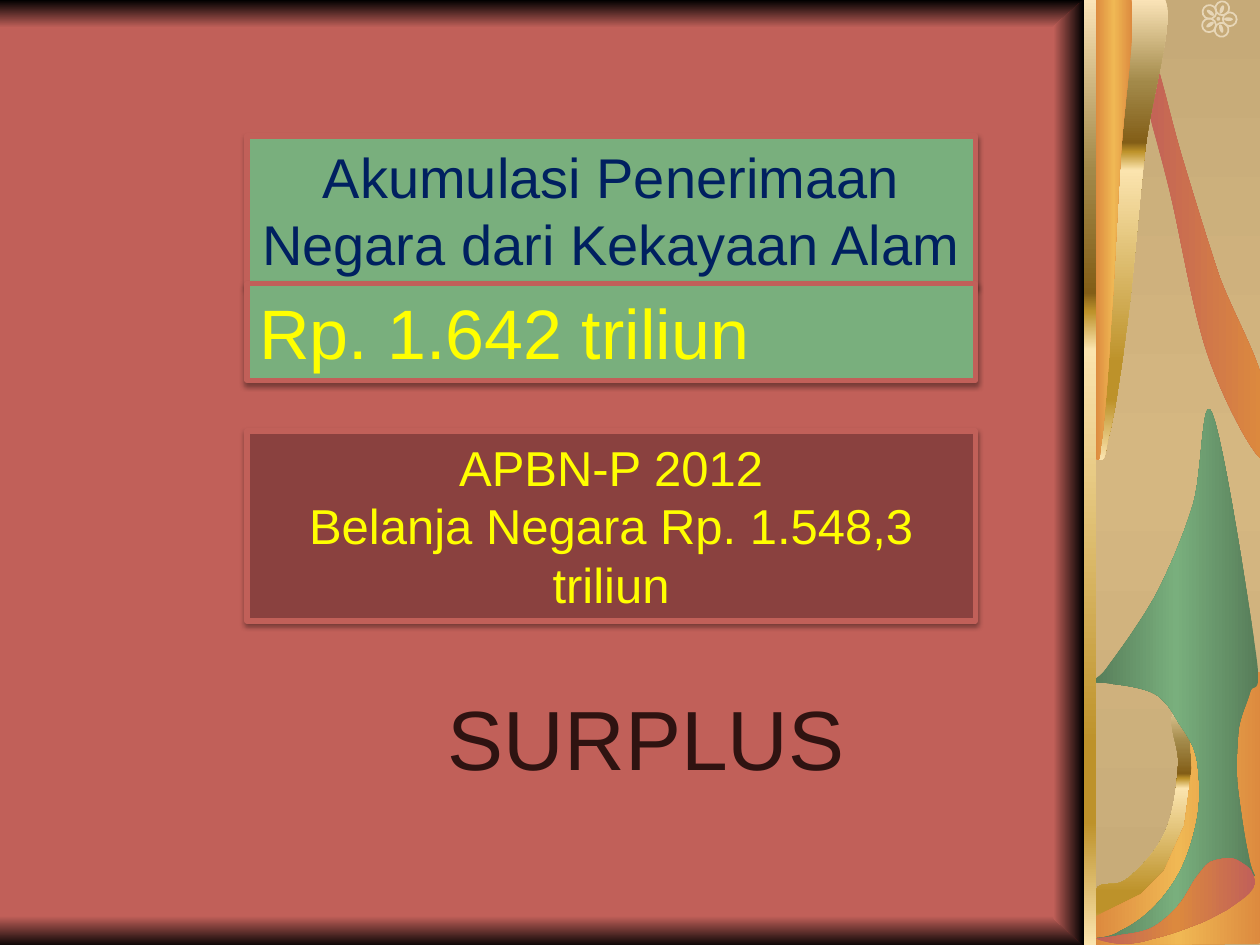
from math import cos, radians, sin

from pptx import Presentation
from pptx.dml.color import RGBColor
from pptx.enum.shapes import MSO_SHAPE
from pptx.enum.text import MSO_ANCHOR, MSO_AUTO_SIZE, PP_ALIGN
from pptx.oxml import parse_xml
from pptx.oxml.ns import nsdecls
from pptx.util import Cm, Pt

RECT, OVAL = MSO_SHAPE.RECTANGLE, MSO_SHAPE.OVAL
LEFT, CENTER = PP_ALIGN.LEFT, PP_ALIGN.CENTER
TOP = MSO_ANCHOR.TOP
GROW = MSO_AUTO_SIZE.SHAPE_TO_FIT_TEXT

COLORS = {
    "red": "C16059", "black": "000000", "sand": "C6AA78", "light_sand": "D5B781",
    "flower": "E7D6B7", "orange": "DC893E", "amber": "F0B854",
    "green": "79AF7D", "dark_green": "577D59", "maroon": "8A413F",
    "navy": "002060", "yellow": "FFFF00", "brown": "2F1311",
    "cream": "FAE3B7", "bronze": "A28949", "dark_bronze": "835E17",
    "gold": "BD922A", "pale_gold": "FBE4AE",
}
FADE = [(0, "red"), (100, "black")]
FADE_IN = [(0, "black"), (100, "red")]
SAND = [(0, "sand"), (50, "light_sand"), (100, "sand")]
GOLD = [(0, "cream"), (18, "bronze"), (31, "dark_bronze"), (33, "gold"),
        (37, "pale_gold"), (79, "gold"), (87, "gold"), (100, "pale_gold")]
ORANGE = [(0, "orange"), (50, "amber"), (100, "orange")]
GREEN = [(0, "dark_green"), (50, "green"), (100, "dark_green")]
EMBER = [(0, "red"), (100, "orange")]
FLAME = [(0, "red"), (50, "orange"), (100, "red")]

# Each outline is a start point, then lines (2 numbers) and Bezier curves (6 numbers).
GOLD_HOOK = [
    (9.34, 5.64), (9.23, 5.7, 9.37, 5.92, 9.35, 6.08),
    (9.34, 6.25, 9.31, 6.48, 9.24, 6.62), (9.17, 6.77, 9.03, 6.91, 8.94, 6.98),
    (8.85, 7.05, 8.74, 6.98, 8.7, 7.06), (8.7, 7.49), (10, 7.49), (10, 5.68),
    (9.89, 5.37, 9.48, 5.64, 9.34, 5.64)]
ORANGE_BASE = [
    (8.68, 7.5), (8.68, 7.28), (9.05, 7.1), (9.24, 6.91), (9.4, 6.55), (9.46, 6.1),
    (9.44, 5.76), (9.87, 5.31), (10.02, 5.34), (10.02, 7.49)]
GREEN_LEAF = [
    (9.62, 3.28), (9.54, 3.08, 9.54, 3.77, 9.47, 4), (9.4, 4.23, 9.3, 4.47, 9.19, 4.69),
    (9.08, 4.9, 8.89, 5.16, 8.8, 5.28), (8.72, 5.4, 8.67, 5.38, 8.68, 5.41),
    (8.68, 5.43, 8.76, 5.41, 8.84, 5.43), (8.93, 5.44, 9.08, 5.46, 9.17, 5.51),
    (9.25, 5.56, 9.3, 5.64, 9.35, 5.73), (9.41, 5.82, 9.48, 5.91, 9.5, 6.04),
    (9.52, 6.17, 9.53, 6.34, 9.5, 6.5), (9.47, 6.66, 9.41, 6.86, 9.31, 7.01),
    (9.21, 7.16, 9.08, 7.3, 8.89, 7.39), (8.78, 7.46, 8.69, 7.43, 8.71, 7.45),
    (8.73, 7.46, 8.9, 7.5, 9.01, 7.48), (9.12, 7.46, 9.26, 7.41, 9.34, 7.34),
    (9.43, 7.28, 9.48, 7.15, 9.54, 7.07), (9.6, 7, 9.65, 6.93, 9.71, 6.9),
    (9.76, 6.87, 9.83, 6.89, 9.88, 6.9), (9.92, 6.91, 9.95, 6.97, 9.96, 6.95),
    (9.96, 6.94, 9.93, 6.91, 9.91, 6.79), (9.88, 6.67, 9.84, 6.39, 9.82, 6.22),
    (9.81, 6.05, 9.82, 5.91, 9.83, 5.79), (9.85, 5.67, 9.89, 5.6, 9.92, 5.5),
    (9.94, 5.4, 10.02, 5.56, 9.97, 5.2), (9.92, 4.84, 9.71, 3.48, 9.62, 3.28)]
RED_RIBBON = [
    (9.14, 0.4), (9.2, 0.51, 9.29, 0.94, 9.38, 1.24), (9.47, 1.54, 9.58, 1.9, 9.68, 2.2),
    (9.79, 2.49, 9.96, 2.78, 10.02, 3.02), (10.02, 3.65),
    (9.94, 3.61, 9.7, 3.16, 9.58, 2.8), (9.46, 2.44, 9.37, 1.87, 9.28, 1.5),
    (9.19, 1.13, 9.07, 0.76, 9.05, 0.58), (9.02, 0.4, 9.09, 0.29, 9.14, 0.4)]
GOLD_RIBBON = [
    (8.69, 3.64), (8.78, 3.67, 8.76, 3.64, 8.8, 3.46), (8.85, 3.28, 8.9, 2.92, 8.95, 2.54),
    (9, 2.16, 9.04, 1.6, 9.09, 1.18), (9.14, 0.75, 9.32, 0.2, 9.25, 0), (8.69, 0)]
ORANGE_RIBBON = [
    (8.69, 3.64), (8.74, 3.67, 8.72, 3.64, 8.75, 3.46), (8.77, 3.28, 8.8, 2.92, 8.82, 2.54),
    (8.85, 2.16, 8.87, 1.6, 8.9, 1.18), (8.93, 0.76, 9.02, 0.2, 8.98, 0), (8.69, 0)]
FLAME_TIP = [
    (8.7, 7.45), (8.7, 7.44, 8.83, 7.44, 8.9, 7.42), (8.98, 7.41, 9.07, 7.4, 9.15, 7.36),
    (9.22, 7.32, 9.3, 7.25, 9.35, 7.19), (9.41, 7.12, 9.45, 7.03, 9.49, 6.97),
    (9.54, 6.91, 9.56, 6.87, 9.61, 6.84), (9.66, 6.82, 9.72, 6.81, 9.77, 6.81),
    (9.81, 6.82, 9.83, 6.83, 9.86, 6.85), (9.89, 6.87, 9.93, 6.89, 9.94, 6.93),
    (9.96, 6.96, 9.98, 7.01, 9.94, 7.06), (9.91, 7.11, 9.81, 7.17, 9.74, 7.22),
    (9.66, 7.26, 9.58, 7.31, 9.49, 7.34), (9.39, 7.38, 9.25, 7.43, 9.15, 7.45),
    (9.06, 7.48, 8.99, 7.49, 8.91, 7.49), (8.83, 7.49, 8.71, 7.46, 8.7, 7.45)]
SIDE_EDGE = [(8.6, 0), (8.36, 0.21), (8.36, 7.29), (8.6, 7.5)]


def rgb(name):
    return RGBColor.from_string(COLORS[name])


def inch(value):
    return Cm(value * 2.54)


def paint_gradient(sp, stops, angle):
    sp.shadow.inherit = False
    sp.line.fill.background()
    gs = "".join(f'<a:gs pos="{pos * 1000}"><a:srgbClr val="{COLORS[c]}"/></a:gs>'
                 for pos, c in stops)
    sp._element.spPr.insert(2, parse_xml(
        f'<a:gradFill {nsdecls("a")} rotWithShape="1"><a:gsLst>{gs}</a:gsLst>'
        f'<a:lin ang="{angle * 60000}" scaled="0"/></a:gradFill>'))


def add_preset(s, kind, box):
    sp = s.shapes.add_shape(kind, *map(inch, box))
    sp.shadow.inherit = False
    return sp


def add_band(s, box, stops):
    paint_gradient(add_preset(s, RECT, box), stops, 90)


def flatten(outline, steps=12):
    points = [outline[0]]
    for seg in outline[1:]:
        if len(seg) == 2:
            points.append(seg)
            continue
        ctrl = [points[-1], seg[:2], seg[2:4], seg[4:]]
        for i in range(1, steps + 1):
            t = i / steps
            weights = ((1 - t) ** 3, 3 * t * (1 - t) ** 2, 3 * t * t * (1 - t), t ** 3)
            points.append(tuple(sum(w * c[k] for w, c in zip(weights, ctrl))
                                for k in (0, 1)))
    return [(inch(x), inch(y)) for x, y in points]


def add_outline(s, outline, stops, angle):
    start, *rest = flatten(outline)
    builder = s.shapes.build_freeform(*start)
    builder.add_line_segments(rest, close=True)
    paint_gradient(builder.convert_to_shape(), stops, angle)


def add_oval(s, cx, cy, w, h, angle=0, ring=False):
    sp = add_preset(s, OVAL, (cx - w / 2, cy - h / 2, w, h))
    sp.rotation = angle
    if ring:
        sp.fill.background()
        sp.line.color.rgb = rgb("flower")
        sp.line.width = Pt(1)
    else:
        sp.fill.solid()
        sp.fill.fore_color.rgb = rgb("flower")
        sp.line.fill.background()


def add_flower(s, cx, cy):
    add_oval(s, cx, cy, 0.03, 0.03)
    for angle in range(2, 362, 72):
        dx, dy = cos(radians(angle)), sin(radians(angle))
        add_oval(s, cx + 0.09 * dx, cy + 0.09 * dy, 0.11, 0.11, angle, ring=True)
        add_oval(s, cx + 0.08 * dx, cy + 0.08 * dy, 0.07, 0.03, angle)


def add_text(sp, lines, size, color, align):
    tf = sp.text_frame
    tf.word_wrap = True
    tf.auto_size = GROW
    tf.vertical_anchor = TOP
    for i, line in enumerate(lines):
        p = tf.paragraphs[0] if i == 0 else tf.add_paragraph()
        p.alignment = align
        r = p.add_run()
        r.text = line
        r.font.name = "Arial"
        r.font.size = Pt(size)
        r.font.color.rgb = rgb(color)


def add_panel(s, top, height, fill, lines, size, color, align=CENTER):
    sp = add_preset(s, RECT, (1.96, top, 5.78, height))
    sp.fill.solid()
    sp.fill.fore_color.rgb = rgb(fill)
    sp.line.color.rgb = rgb("red")
    sp.line.width = Pt(3)
    effects = sp._element.spPr.find("{*}effectLst")
    effects.append(parse_xml(
        f'<a:outerShdw {nsdecls("a")} blurRad="{Pt(3.1)}" dist="{Pt(1.6)}" dir="5400000" '
        f'rotWithShape="0"><a:srgbClr val="{COLORS["black"]}"><a:alpha val="38000"/>'
        '</a:srgbClr></a:outerShdw>'))
    add_text(sp, lines, size, color, align)


def main():
    prs = Presentation()
    prs.slide_width, prs.slide_height = inch(10), inch(7.5)
    s = prs.slides.add_slide(prs.slide_layouts[6])
    s.background.fill.solid()
    s.background.fill.fore_color.rgb = rgb("red")

    add_band(s, (0, 7.27, 8.84, 0.25), FADE)
    add_band(s, (0, 0, 8.84, 0.22), FADE_IN)
    add_band(s, (8.7, 0, 1.32, 7.5), SAND)
    add_flower(s, 9.67, 0.15)
    for outline, stops, angle in [
            (GOLD_HOOK, GOLD, 90), (ORANGE_BASE, ORANGE, 0), (GREEN_LEAF, GREEN, 0),
            (RED_RIBBON, EMBER, 0), (GOLD_RIBBON, GOLD, 90), (ORANGE_RIBBON, ORANGE, 0)]:
        add_outline(s, outline, stops, angle)
    add_band(s, (8.6, 0, 0.1, 7.5), GOLD)
    add_outline(s, FLAME_TIP, FLAME, 0)
    add_outline(s, SIDE_EDGE, FADE, 0)

    add_panel(s, 1.08, 1.18, "green",
              ["Akumulasi Penerimaan Negara dari Kekayaan Alam"], 32, "navy")
    add_panel(s, 2.25, 0.77, "green", ["Rp. 1.642 triliun"], 40, "yellow", LEFT)
    add_panel(s, 3.42, 1.51, "maroon",
              ["APBN-P 2012", "Belanja Negara Rp. 1.548,3 triliun"], 28, "yellow")
    result = s.shapes.add_textbox(*map(inch, (2.56, 5.4, 5.14, 0.91)))
    add_text(result, ["SURPLUS"], 48, "brown", CENTER)
    prs.save("out.pptx")


if __name__ == "__main__":
    main()
